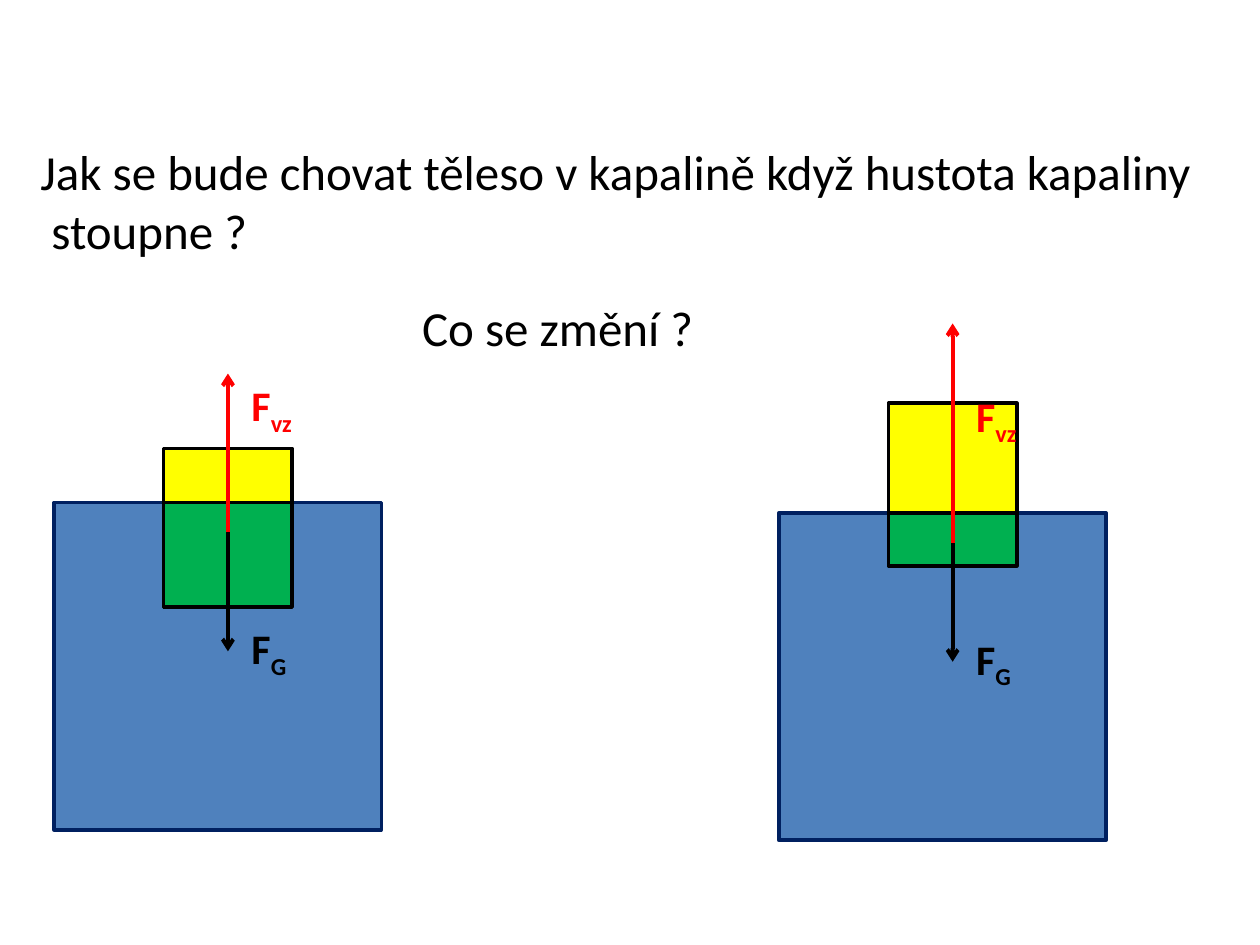
import pptx
import pptx.dml.color
import pptx.enum.shapes
import pptx.enum.text
import pptx.oxml
import pptx.oxml.ns
import pptx.util
from pptx.util import Cm

COLORS = {
    "water": "4F81BD",
    "water_edge": "002060",
    "above": "FFFF00",
    "submerged": "00B050",
    "buoyancy": "FF0000",
    "black": "000000",
}
FONT = "Calibri"
TANK_SIZE = 6.6
BODY_WIDTH, BODY_HEIGHT = 2.59, 3.2
BODY_INSET = 2.21
ARROW_INSET = BODY_INSET + BODY_WIDTH / 2
LABEL_INSET = 3.73
FORCE_DEPTH = 0.6
WEIGHT_LENGTH = 2.4


def rgb(color):
    return pptx.dml.color.RGBColor.from_string(COLORS[color])


def write_text(box, lines, size=28, color="black", bold=False, subscript="", wrap=False):
    """Fill a box with one paragraph per line; a subscript follows the last line."""
    frame = box.text_frame
    frame.word_wrap = wrap
    frame.auto_size = pptx.enum.text.MSO_AUTO_SIZE.NONE
    frame.vertical_anchor = pptx.enum.text.MSO_ANCHOR.TOP
    frame.text = "\n".join(lines)
    if subscript:
        span = frame.paragraphs[-1].add_run()
        span.text = subscript
        span.font._element.set("baseline", "-25000")
    for para in frame.paragraphs:
        para.alignment = pptx.enum.text.PP_ALIGN.LEFT
        for span in para.runs:
            span.font.name = FONT
            span.font.size = pptx.util.Pt(size)
            span.font.bold = bold
            span.font.color.rgb = rgb(color)


def add_text(page, left, top, width, height, lines, **style):
    box = page.shapes.add_textbox(Cm(left), Cm(top), Cm(width), Cm(height))
    write_text(box, lines, **style)


def add_title(page, left, top, width, height, lines):
    title = page.shapes.title
    title.left, title.top = Cm(left), Cm(top)
    title.width, title.height = Cm(width), Cm(height)
    write_text(title, lines)


def add_block(page, left, top, width, height, fill, edge="black"):
    block = page.shapes.add_shape(
        pptx.enum.shapes.MSO_SHAPE.RECTANGLE, Cm(left), Cm(top), Cm(width), Cm(height)
    )
    block.shadow.inherit = False
    block.fill.solid()
    block.fill.fore_color.rgb = rgb(fill)
    block.line.color.rgb = rgb(edge)
    block.line.width = pptx.util.Pt(2)


def add_force(page, x, start, end, color):
    """Draw a vertical arrow from start to end."""
    arrow = page.shapes.add_connector(
        pptx.enum.shapes.MSO_CONNECTOR.STRAIGHT, Cm(x), Cm(start), Cm(x), Cm(end)
    )
    arrow.line.color.rgb = rgb(color)
    arrow.line.width = pptx.util.Pt(2.25)
    head = pptx.oxml.parse_xml(f'<a:tailEnd {pptx.oxml.ns.nsdecls("a")} type="arrow"/>')
    arrow.line._get_or_add_ln().append(head)
    no_shadow = pptx.oxml.parse_xml(f'<a:effectLst {pptx.oxml.ns.nsdecls("a")}/>')
    arrow._element.spPr.append(no_shadow)


def add_floating_body(page, left, surface, rise, draft, buoyancy):
    """Draw a tank whose body stands out by rise and sinks by draft."""
    body_left = left + BODY_INSET
    arrow_x = left + ARROW_INSET
    label_left = left + LABEL_INSET
    start = surface + FORCE_DEPTH
    add_block(page, left, surface, TANK_SIZE, TANK_SIZE, "water", "water_edge")
    add_block(page, body_left, surface - rise, BODY_WIDTH, BODY_HEIGHT, "above")
    add_text(page, label_left, surface - 2.6, 1.88, 2.31, ["F"], size=24,
             color="buoyancy", bold=True, subscript="vz", wrap=True)
    add_text(page, label_left, surface + 2.3, 1.27, 2.31, ["F"], size=24,
             bold=True, subscript="G")
    add_block(page, body_left, surface, BODY_WIDTH, draft, "submerged")
    add_force(page, arrow_x, start, start + WEIGHT_LENGTH, "black")
    add_force(page, arrow_x, start, start - buoyancy, "buoyancy")


def main():
    deck = pptx.Presentation()
    deck.slide_width, deck.slide_height = Cm(25.4), Cm(19.05)
    page = deck.slides.add_slide(deck.slide_layouts[5])
    add_title(page, 0.56, 2.72, 23.95, 2.64, [
        "Jak se bude chovat těleso v kapalině když hustota kapaliny",
        " stoupne ?",
    ])
    add_text(page, 8.26, 5.87, 6.05, 1.45, ["Co se změní ?"])
    add_floating_body(page, 1.09, 10.13, rise=1.09, draft=2.11, buoyancy=3.2)
    add_floating_body(page, 15.7, 10.34, rise=2.21, draft=1.07, buoyancy=4.42)
    deck.save("out.pptx")


if __name__ == "__main__":
    main()
